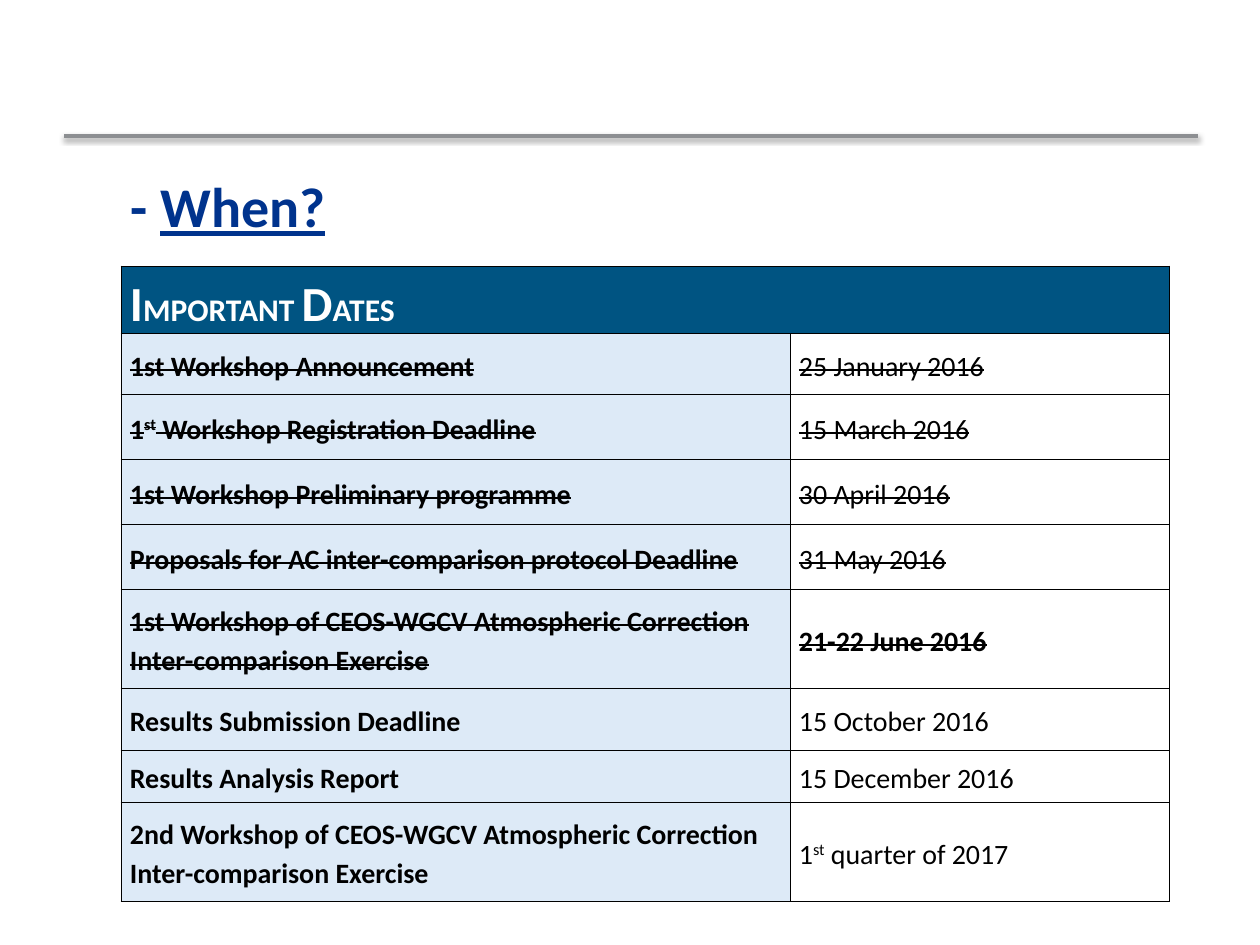
"""Build the slide with the table of important workshop dates."""
from lxml import etree
from pptx import Presentation
from pptx.dml.color import RGBColor
from pptx.enum.shapes import MSO_CONNECTOR
from pptx.enum.text import MSO_ANCHOR
from pptx.oxml import parse_xml
from pptx.util import Pt

LINE = MSO_CONNECTOR.STRAIGHT
MID = MSO_ANCHOR.MIDDLE
NS = 'xmlns:a="http://schemas.openxmlformats.org/drawingml/2006/main"'
PX = 914400 / 126


def px(n):
    return round(n * PX)


def color(code):
    return RGBColor.from_string(code)


prs = Presentation()
prs.slide_width, prs.slide_height = px(1260), px(945)
slide = prs.slides.add_slide(prs.slide_layouts[6])

rule = slide.shapes.add_connector(LINE, px(1198), px(136), px(64), px(136))
rule.line.color.rgb = color("8D8F92")
rule.line.width = Pt(2)
glow = parse_xml(
    f'<a:effectLst {NS}><a:outerShdw blurRad="39370" dist="20320" dir="5400000" '
    'rotWithShape="0"><a:srgbClr val="000000"><a:alpha val="38000"/></a:srgbClr>'
    '</a:outerShdw></a:effectLst>')
rule._element.spPr.append(glow)

title = slide.shapes.add_textbox(px(118), px(165), px(762), px(81))
frame = title.text_frame
frame.word_wrap = True
frame.vertical_anchor = MID
for text, under in (("- ", False), ("When?", True)):
    run = frame.paragraphs[0].add_run()
    run.text = text
    font = run.font
    font.name, font.size, font.bold = "Calibri", Pt(32), True
    font.underline = under
    font.color.rgb = color("00338D")

HEAD = [("I", 28), ("MPORTANT ", 18), ("D", 28), ("ATES", 18)]
EVENT = "Workshop of CEOS-WGCV Atmospheric Correction Inter-comparison Exercise"
ROWS = [
    (61, ["1st Workshop Announcement"], ["25 January 2016"]),
    (65, ["1", "st", " Workshop Registration Deadline"], ["15 March 2016"]),
    (65, ["1st Workshop Preliminary programme"], ["30 April 2016"]),
    (65, ["Proposals for AC inter-comparison protocol Deadline"], ["31 May 2016"]),
    (99, ["1st " + EVENT], ["21-22 June 2016"]),
    (62, ["Results Submission Deadline"], ["15 October 2016"]),
    (52, ["Results Analysis Report"], ["15 December 2016"]),
    (99, ["2nd " + EVENT], ["1", "st", " quarter of 2017"]),
]
DONE = 5

shape = slide.shapes.add_table(len(ROWS) + 1, 2, px(121), px(266), px(1048), px(634))
table = shape.table
table.columns[0].width, table.columns[1].width = px(669), px(379)
table.rows[0].height = px(66)
table.cell(0, 0).merge(table.cell(0, 1))

cells = [(0, 0, HEAD), (0, 1, [])]
for row, (high, label, date) in enumerate(ROWS, 1):
    table.rows[row].height = px(high)
    cells += [(row, col, [(text, 16) for text in words])
              for col, words in enumerate((label, date))]

for row, col, runs in cells:
    cell = table.cell(row, col)
    cell.margin_left = cell.margin_right = px(9)
    cell.margin_top = cell.margin_bottom = 0
    cell.vertical_anchor = MID
    bold = col == 0 or row == DONE
    para = cell.text_frame.paragraphs[0]
    para.line_spacing = 1.15
    if row == 0 or not bold:
        para.space_after = Pt(12)
    for text, size in runs:
        run = para.add_run()
        run.text = text
        font = run.font
        font.name, font.size, font.bold = "Calibri", Pt(size), bold
        font.color.rgb = color("000000" if row else "FFFFFF")
        props = run._r.get_or_add_rPr()
        if 0 < row <= DONE:
            props.set("strike", "sngStrike")
        if text == "st":
            props.set("baseline", "30000")
    tint = "005482" if row == 0 else ("DDEAF7", "FFFFFF")[col]
    edges = cell._tc.get_or_add_tcPr()
    for side in ("lnL", "lnR", "lnT", "lnB"):
        edges.append(etree.fromstring(
            f'<a:{side} {NS} w="6350"><a:solidFill><a:srgbClr val="000000"/>'
            f'</a:solidFill></a:{side}>'))
    cell.fill.solid()
    cell.fill.fore_color.rgb = color(tint)

prs.save("out.pptx")
